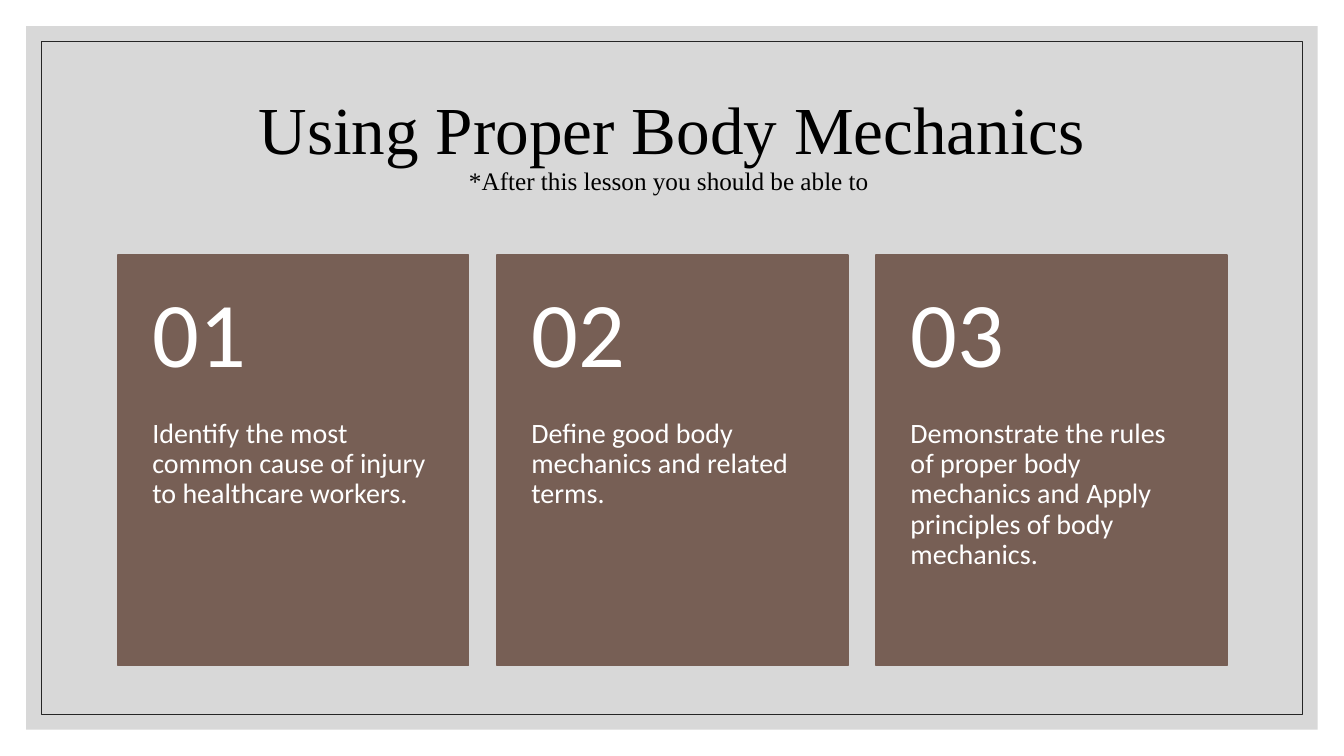
from dataclasses import dataclass

from lxml import etree
from pptx import Presentation
from pptx.dml.color import RGBColor
from pptx.enum.shapes import MSO_SHAPE
from pptx.enum.text import MSO_ANCHOR, MSO_AUTO_SIZE, PP_ALIGN
from pptx.oxml.ns import qn
from pptx.util import Inches, Pt

RECT = MSO_SHAPE.RECTANGLE
TOP, MIDDLE = MSO_ANCHOR.TOP, MSO_ANCHOR.MIDDLE
LEFT, CENTER = PP_ALIGN.LEFT, PP_ALIGN.CENTER
NO_FIT = MSO_AUTO_SIZE.NONE
WIDTH, HEIGHT = 13.33, 7.5
GRID_LEFT, GRID_TOP, CARD_W, GAP = 1.17, 2.53, 3.48, 0.28
NUMBER_H, GOAL_H = 1.63, 2.44
TITLE = "Using Proper Body Mechanics"
SUBTITLE = "*After this lesson you should be able to "
GOALS = [
    "Identify the most common cause of injury to healthcare workers.",
    "Define good body mechanics and related terms.",
    "Demonstrate the rules of proper body mechanics and Apply principles of body mechanics.",
]


@dataclass(frozen=True)
class Theme:
    """Colours, fonts and type sizes of the slide."""
    panel: str = "BFBFBF"
    frame: str = "262626"
    card: str = "775F55"
    ink: str = "000000"
    light: str = "FFFFFF"
    serif: str = "Times New Roman"
    sans: str = "Calibri"
    title: int = 48
    subtitle: int = 18
    number: int = 66
    goal: int = 20


class Deck:
    """Holds the theme and the current slide."""

    def __init__(self, theme):
        """Start a presentation with one title-only slide."""
        self.theme = theme
        self.prs = Presentation()
        self.prs.slide_width, self.prs.slide_height = Inches(WIDTH), Inches(HEIGHT)
        self.s = self.prs.slides.add_slide(self.prs.slide_layouts[5])

    def rect(self, box, fill=None, line=None, weight=1, alpha=None):
        """Add a plain rectangle with optional fill, outline and opacity."""
        sp = self.s.shapes.add_shape(RECT, *map(Inches, box))
        sp.shadow.inherit = False
        if fill:
            sp.fill.solid()
            sp.fill.fore_color.rgb = RGBColor.from_string(fill)
        else:
            sp.fill.background()
        if line:
            sp.line.color.rgb = RGBColor.from_string(line)
            sp.line.width = Pt(weight)
        else:
            sp.line.fill.background()
        if alpha:
            color = sp.element.spPr.find(f".//{qn('a:srgbClr')}")
            etree.SubElement(color, qn("a:alpha")).set("val", str(alpha * 1000))

    def frame_text(self, sp, insets, anchor, align):
        """Format a text frame and return its first paragraph."""
        tf = sp.text_frame
        sides = ("margin_left", "margin_top", "margin_right", "margin_bottom")
        style = dict(zip(sides, map(Inches, insets)))
        style.update(word_wrap=True, auto_size=NO_FIT, vertical_anchor=anchor)
        for name, value in style.items():
            setattr(tf, name, value)
        p = tf.paragraphs[0]
        p.alignment, p.line_spacing = align, 0.9
        return p

    def run(self, p, text, size, font, color):
        """Append one formatted run to a paragraph."""
        r = p.add_run()
        r.text = text
        for name, value in {"size": Pt(size), "name": font}.items():
            setattr(r.font, name, value)
        r.font.color.rgb = RGBColor.from_string(color)

    def title(self, box, text, subtitle):
        """Place the title placeholder in front of the panel."""
        t, sp = self.theme, self.s.shapes.title
        sp.left, sp.top, sp.width, sp.height = map(Inches, box)
        sp.element.getparent().append(sp.element)
        p = self.frame_text(sp, (0.1, 0.05, 0.1, 0.05), MIDDLE, CENTER)
        self.run(p, text, t.title, t.serif, t.ink)
        p.add_line_break()
        self.run(p, subtitle, t.subtitle, t.serif, t.ink)

    def text(self, box, text, size, insets, anchor):
        """Add a light text box for a card."""
        sp = self.s.shapes.add_textbox(*map(Inches, box))
        p = self.frame_text(sp, insets, anchor, LEFT)
        self.run(p, text, size, self.theme.sans, self.theme.light)

    def card(self, column, goal):
        """Add a numbered goal card in a grid column."""
        t = self.theme
        x = GRID_LEFT + column * (CARD_W + GAP)
        self.rect((x, GRID_TOP, CARD_W, NUMBER_H + GOAL_H), t.card, t.card)
        self.text((x, GRID_TOP + NUMBER_H, CARD_W, GOAL_H), goal, t.goal,
                  (0.34, 0, 0.34, 0.36), TOP)
        self.text((x, GRID_TOP, CARD_W, NUMBER_H), f"{column + 1:02}", t.number,
                  (0.34, 0.18, 0.34, 0.18), MIDDLE)


def inset(margin):
    """Return a box that keeps a margin from every slide edge."""
    return margin, margin, WIDTH - 2 * margin, HEIGHT - 2 * margin


def main():
    """Build and save the slide."""
    theme = Theme()
    deck = Deck(theme)
    deck.rect(inset(0.26), fill=theme.panel, alpha=60)
    deck.rect(inset(0.41), line=theme.frame, weight=0.5)
    deck.title((GRID_LEFT, 0.7, WIDTH - 2 * GRID_LEFT, 1.5), TITLE, SUBTITLE)
    for column, goal in enumerate(GOALS):
        deck.card(column, goal)
    deck.prs.save("out.pptx")


if __name__ == "__main__":
    main()
